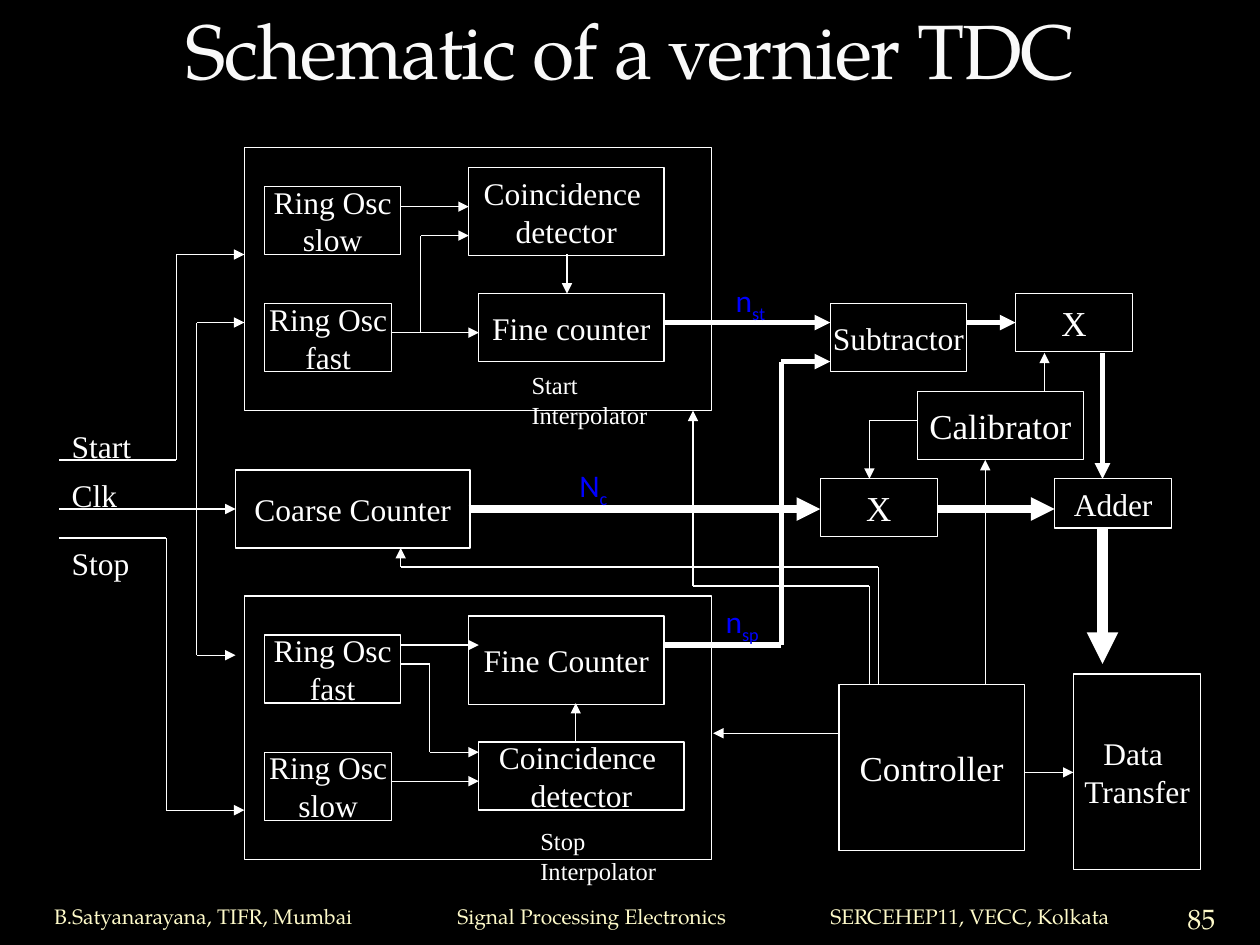
from lxml.etree import SubElement
from pptx import Presentation
from pptx.dml.color import RGBColor
from pptx.enum.shapes import MSO_CONNECTOR, MSO_SHAPE
from pptx.enum.text import MSO_ANCHOR, PP_ALIGN
from pptx.oxml.ns import qn
from pptx.util import Inches, Pt

THEME = {
    "back": "000000", "ink": "FFFFFF", "head": "F9F9F9", "foot": "FEFAC9", "tag": "0000FF",
    "serif": "Times New Roman", "sans": "Calibri", "book": "TeX Gyre Pagella",
    "title": 44, "large": 20, "body": 18, "number": 16, "small": 14, "note": 12,
    "thin": 0.75, "bus": 3, "wide": 4.5, "heavy": 6,
}

# Content: places are left, top, width, height
TITLE = "Schematic of a vernier TDC"
FOOT = ["B.Satyanarayana, TIFR, Mumbai", "Signal Processing Electronics",
        "SERCEHEP11, VECC, Kolkata"]
STOPS = [3.2, 6.16]
NUMBER = "85"

FRAMES = [(1.94, 1.17, 3.71, 2.09), (1.94, 4.73, 3.71, 2.09)]
BOXES = [
    ("Ring Osc\nslow", (2.1, 1.48, 1.08, 0.54), "body"),
    ("Ring Osc\nfast", (2.1, 2.41, 1.01, 0.54), "body"),
    ("Coincidence \ndetector", (3.72, 1.33, 1.55, 0.7), "body"),
    ("Fine counter", (3.8, 2.33, 1.47, 0.54), "body"),
    ("Coarse Counter", (1.87, 3.73, 1.86, 0.62), "body"),
    ("Ring Osc\nfast", (2.1, 5.04, 1.08, 0.54), "body"),
    ("Ring Osc\nslow", (2.1, 5.97, 1.01, 0.54), "body"),
    ("Fine Counter", (3.72, 4.89, 1.55, 0.7), "body"),
    ("Coincidence \ndetector", (3.8, 5.89, 1.63, 0.54), "body"),
    ("Subtractor", (6.59, 2.41, 1.08, 0.54), "body"),
    ("X", (8.06, 2.33, 0.93, 0.46), "large"),
    ("Calibrator", (7.28, 3.11, 1.32, 0.54), "large"),
    ("X", (6.51, 3.8, 0.93, 0.46), "large"),
    ("Adder", (8.37, 3.8, 0.93, 0.39), "body"),
    ("Controller", (6.66, 5.43, 1.47, 1.32), "large"),
    ("Data \nTransfer", (8.52, 5.35, 1.01, 1.55), "body"),
]
LABELS = [
    ("Start", (0.47, 3.34, 0.85, 0.37), "body"),
    ("Clk", (0.47, 3.73, 0.7, 0.37), "body"),
    ("Stop", (0.47, 4.27, 0.77, 0.37), "body"),
    ("Start Interpolator", (4.12, 2.89, 1.42, 0.31), "small"),
    ("Stop Interpolator", (4.19, 6.51, 1.41, 0.31), "small"),
]
COUNTS = [("n", "st", (5.74, 2.18, 0.44, 0.37)), ("n", "sp", (5.66, 4.73, 0.48, 0.37)),
          ("N", "c", (4.5, 3.65, 0.43, 0.37))]

# Each wire runs through its points and ends in an arrowhead
WIRES = {
    "thin": [
        [(0.47, 3.65), (1.4, 3.65), (1.4, 2.02), (1.94, 2.02)],
        [(0.47, 4.04), (1.87, 4.04)],
        [(0.47, 4.27), (1.32, 4.27), (1.32, 6.43), (1.94, 6.43)],
        [(1.56, 4.04), (1.56, 2.56), (1.94, 2.56)],
        [(1.56, 4.04), (1.56, 5.2), (1.87, 5.2)],
        [(3.18, 1.64), (3.72, 1.64)],
        [(3.1, 2.64), (3.8, 2.64)],
        [(3.34, 2.64), (3.34, 1.87), (3.72, 1.87)],
        [(4.5, 2.02), (4.5, 2.33)],
        [(3.18, 5.12), (3.8, 5.12)],
        [(3.18, 5.27), (3.41, 5.27), (3.41, 5.97), (3.8, 5.97)],
        [(3.1, 6.2), (3.8, 6.2)],
        [(4.57, 5.89), (4.57, 5.58)],
        [(8.29, 3.11), (8.29, 2.8)],
        [(7.28, 3.34), (6.9, 3.34), (6.9, 3.8)],
        [(7.82, 5.43), (7.82, 3.65)],
        [(6.66, 5.82), (5.66, 5.82)],
        [(6.97, 5.43), (6.97, 4.5), (3.18, 4.5), (3.18, 4.35)],
        [(6.9, 5.43), (6.9, 4.65), (5.5, 4.65), (5.5, 3.26)],
        [(8.13, 6.13), (8.52, 6.13)],
    ],
    "bus": [
        [(5.27, 2.56), (6.59, 2.56)],
        [(5.27, 5.12), (6.2, 5.12), (6.2, 2.87), (6.59, 2.87)],
        [(7.67, 2.56), (8.06, 2.56)],
        [(8.75, 2.8), (8.75, 3.8)],
    ],
    "wide": [[(3.72, 4.04), (6.51, 4.04)], [(7.44, 4.04), (8.37, 4.04)]],
    "heavy": [[(8.75, 4.19), (8.75, 5.27)]],
}


def hue(name):
    return RGBColor.from_string(THEME[name])


def assign(item, values):
    for key, value in values.items():
        setattr(item, key, value)


def style(shape, size, face="serif", tint="ink", align=PP_ALIGN.LEFT, **frame):
    assign(shape.text_frame, frame)
    for para in shape.text_frame.paragraphs:
        para.alignment = align
        for run in para.runs:
            assign(run.font, {"size": Pt(THEME[size]), "name": THEME[face]})
            run.font.color.rgb = hue(tint)


def block(slide, place):
    shape = slide.shapes.add_shape(MSO_SHAPE.RECTANGLE, *map(Inches, place))
    shape.shadow.inherit = False
    shape.fill.solid()
    shape.fill.fore_color.rgb = hue("back")
    shape.line.color.rgb = hue("ink")
    shape.line.width = Pt(THEME["thin"])
    return shape


def label(slide, text, place):
    box = slide.shapes.add_textbox(*map(Inches, place))
    box.text_frame.text = text
    return box


def wire(slide, points, weight):
    for start, end in zip(points, points[1:]):
        link = slide.shapes.add_connector(MSO_CONNECTOR.STRAIGHT, *map(Inches, start + end))
        link.line.color.rgb = hue("ink")
        link.line.width = Pt(THEME[weight])
        SubElement(link._element.spPr, qn("a:effectLst"))
    SubElement(link.line._get_or_add_ln(), qn("a:tailEnd"), type="triangle")


def main():
    deck = Presentation()
    assign(deck, {"slide_width": Inches(10), "slide_height": Inches(7.5)})
    slide = deck.slides.add_slide(deck.slide_layouts[5])
    slide.background.fill.solid()
    slide.background.fill.fore_color.rgb = hue("back")

    # Title
    title = slide.shapes.title
    spots = zip(("left", "top", "width", "height"), (0.16, 0.09, 9.69, 0.71))
    assign(title, {key: Inches(value) for key, value in spots})
    title.text_frame.text = TITLE
    style(title, "title", "book", "head", PP_ALIGN.CENTER,
          vertical_anchor=MSO_ANCHOR.BOTTOM, word_wrap=True)
    title.text_frame.paragraphs[0].runs[0].font._element.set("spc", "-100")

    # Footer with tab stops, and slide number
    foot = label(slide, "\t".join(FOOT), (0.16, 7, 8.94, 0.42))
    style(foot, "note", "book", "foot", vertical_anchor=MSO_ANCHOR.BOTTOM,
          word_wrap=True, margin_left=Inches(0.27))
    tabs = SubElement(foot.text_frame.paragraphs[0]._p.get_or_add_pPr(), qn("a:tabLst"))
    for stop in STOPS:
        SubElement(tabs, qn("a:tab"), pos=str(Inches(stop)), algn="l")
    page = label(slide, NUMBER, (9.2, 7, 0.67, 0.42))
    style(page, "number", "book", "foot", PP_ALIGN.CENTER, word_wrap=True,
          vertical_anchor=MSO_ANCHOR.BOTTOM, margin_top=0, margin_bottom=0)

    # Interpolator frames and blocks
    for place in FRAMES:
        block(slide, place)
    for text, place, size in BOXES:
        shape = block(slide, place)
        shape.text_frame.text = text
        style(shape, size, align=PP_ALIGN.CENTER, word_wrap=False,
              vertical_anchor=MSO_ANCHOR.MIDDLE)

    # Wires
    for weight, paths in WIRES.items():
        for points in paths:
            wire(slide, points, weight)

    # Signal names and counts
    for text, place, size in LABELS:
        style(label(slide, text, place), size, word_wrap=True)
    for text, sub, place in COUNTS:
        box = label(slide, text, place)
        run = box.text_frame.paragraphs[0].add_run()
        run.text = sub
        run.font._element.set("baseline", "-25000")
        style(box, "body", "sans", "tag", word_wrap=False)

    deck.save("out.pptx")


if __name__ == "__main__":
    main()
